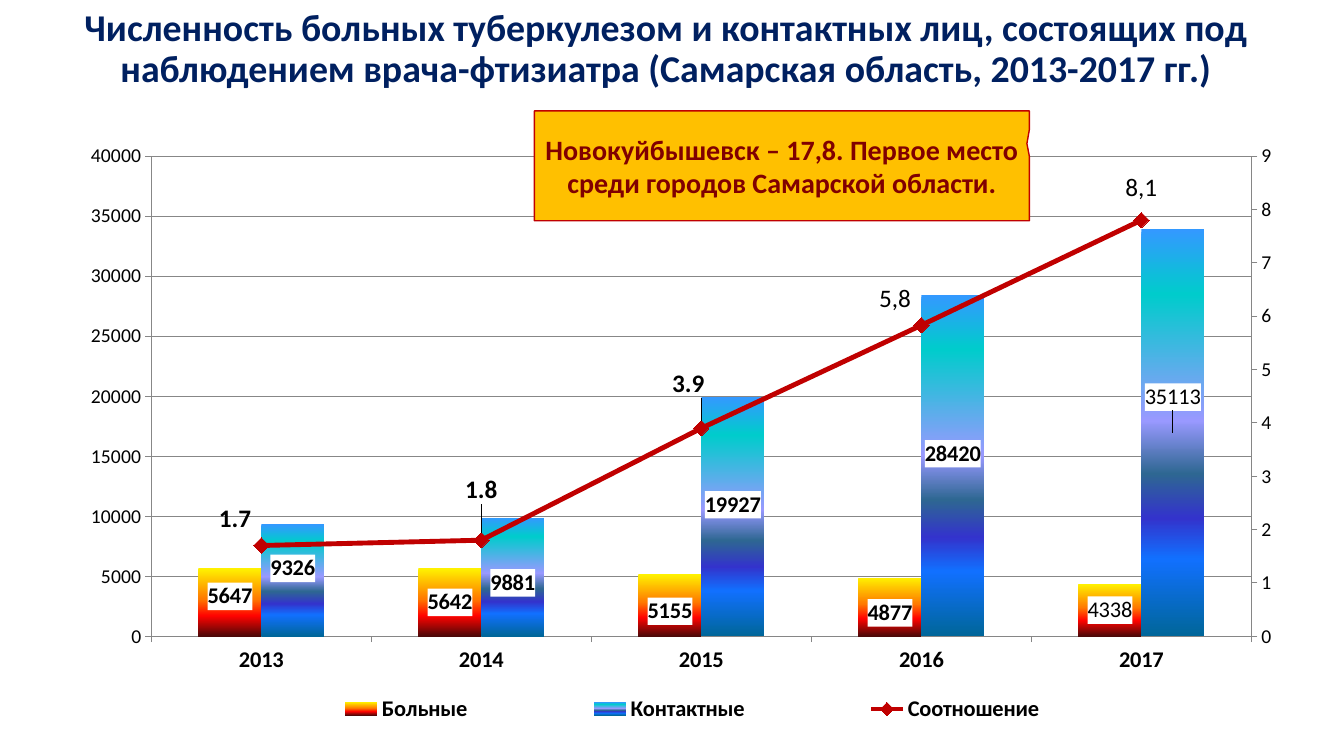
from pptx import Presentation
from pptx.chart.axis import ValueAxis
from pptx.chart.data import CategoryChartData
from pptx.dml.color import RGBColor
from pptx.enum.chart import (XL_CHART_TYPE, XL_LABEL_POSITION, XL_LEGEND_POSITION,
                             XL_MARKER_STYLE, XL_TICK_MARK)
from pptx.enum.shapes import MSO_SHAPE
from pptx.enum.text import MSO_ANCHOR, PP_ALIGN
from pptx.oxml import parse_xml
from pptx.oxml.ns import nsdecls
from pptx.util import Inches, Pt

COLUMNS = XL_CHART_TYPE.COLUMN_CLUSTERED
CENTER, ABOVE = XL_LABEL_POSITION.CENTER, XL_LABEL_POSITION.ABOVE
BOTTOM, DIAMOND = XL_LEGEND_POSITION.BOTTOM, XL_MARKER_STYLE.DIAMOND
OUTSIDE, NONE = XL_TICK_MARK.OUTSIDE, XL_TICK_MARK.NONE
FONT = "Calibri"
COLORS = {"title": "002060", "line": "C00000", "note": "FFC000", "note_text": "800000",
          "axis": "868686", "text": "000000", "label": "FFFFFF"}
GRADIENTS = [
    [(0, "FFF200"), (45, "FF7A00"), (70, "FF0300"), (100, "4D0808")],
    [(0, "3399FF"), (16, "00CCCC"), (47, "9999FF"), (60, "2E6792"),
     (71, "3333CC"), (81, "1170FF"), (100, "006699")],
]


def style_font(font, size, color, bold=False):
    font.name, font.size, font.bold = FONT, Pt(size), bold
    font.color.rgb = RGBColor.from_string(COLORS[color])


def manual_layout(x, y, w=None, h=None, inner=False):
    target = '<c:layoutTarget val="inner"/>' if inner else ""
    modes = '<c:xMode val="edge"/><c:yMode val="edge"/>' if w else ""
    size = f'<c:w val="{w}"/><c:h val="{h}"/>' if w else ""
    return parse_xml(f'<c:layout {nsdecls("c")}><c:manualLayout>{target}{modes}'
                     f'<c:x val="{x}"/><c:y val="{y}"/>{size}</c:manualLayout></c:layout>')


prs = Presentation()
prs.slide_width, prs.slide_height = Inches(13.33), Inches(7.5)
s = prs.slides.add_slide(prs.slide_layouts[6])

# Title
title = s.shapes.add_textbox(0, 0, Inches(13.21), Inches(0.98))
tf = title.text_frame
tf.word_wrap, tf.vertical_anchor = True, MSO_ANCHOR.MIDDLE
tf.text = ("Численность больных туберкулезом и контактных лиц, состоящих под "
           "наблюдением врача-фтизиатра (Самарская область, 2013-2017 гг.)")
p = tf.paragraphs[0]
p.alignment, p.line_spacing = PP_ALIGN.CENTER, 0.9
style_font(p.runs[0].font, 27, "title", True)

# Chart data
data = CategoryChartData()
data.categories = ["2013", "2014", "2015", "2016", "2017"]
data.add_series("Больные", [5647, 5642, 5155, 4877, 4354])
data.add_series("Контактные", [9326, 9881, 19927, 28420, 33896])
data.add_series("Соотношение", [1.7, 1.8, 3.9, 5.83, 7.8])
chart = s.shapes.add_chart(COLUMNS, Inches(0.16), Inches(1.39), Inches(13.02),
                           Inches(5.91), data).chart
chart.has_title = False
style_font(chart.font, 14, "text")
chart.plots[0].gap_width, chart.plots[0].overlap = 150, 0

# Ratio series becomes a line on a second axis
area = chart._chartSpace.chart.plotArea
bars = area.xpath("c:barChart")[0]
ratio = bars.xpath("c:ser")[2]
for flag in ratio.xpath("c:invertIfNegative"):
    ratio.remove(flag)
line_chart = parse_xml(
    f'<c:lineChart {nsdecls("c")}><c:grouping val="standard"/><c:varyColors val="0"/>'
    '<c:marker val="1"/><c:axId val="501"/><c:axId val="502"/></c:lineChart>')
line_chart.insert(2, ratio)
bars.addnext(line_chart)
hidden_axis = parse_xml(
    f'<c:catAx {nsdecls("c")}><c:axId val="501"/><c:scaling><c:orientation val="minMax"/>'
    '</c:scaling><c:delete val="1"/><c:axPos val="b"/><c:crossAx val="502"/>'
    '<c:crosses val="autoZero"/></c:catAx>')
right_axis = parse_xml(
    f'<c:valAx {nsdecls("c")}><c:axId val="502"/><c:scaling><c:orientation val="minMax"/>'
    '</c:scaling><c:delete val="0"/><c:axPos val="r"/>'
    '<c:numFmt formatCode="General" sourceLinked="0"/><c:tickLblPos val="nextTo"/>'
    '<c:crossAx val="501"/><c:crosses val="max"/><c:crossBetween val="between"/></c:valAx>')
area.xpath("c:valAx")[0].addnext(hidden_axis)
hidden_axis.addnext(right_axis)

# Axes
right = ValueAxis(right_axis)
for axis, top, step in ((chart.value_axis, 40000, 5000), (right, 9, 1)):
    axis.minimum_scale, axis.maximum_scale, axis.major_unit = 0, top, step
    style_font(axis.tick_labels.font, 14, "text")
style_font(chart.category_axis.tick_labels.font, 16, "text", True)
for axis in (chart.value_axis, right, chart.category_axis):
    axis.has_major_gridlines = False
    axis.major_tick_mark, axis.minor_tick_mark = OUTSIDE, NONE
    axis.format.line.color.rgb = RGBColor.from_string(COLORS["axis"])

# Column and line formats
columns, (ratio_line,) = list(chart.plots[0].series), chart.plots[1].series
for ser, stops in zip(columns, GRADIENTS):
    ser.format.fill.gradient()
    ser.format.fill.gradient_angle = 270
    stop_list = ser._element.xpath(".//a:gsLst")[0]
    for stop in list(stop_list):
        stop_list.remove(stop)
    for pos, color in stops:
        stop_list.append(parse_xml(f'<a:gs {nsdecls("a")} pos="{pos * 1000}">'
                                   f'<a:srgbClr val="{color}"/></a:gs>'))
red = RGBColor.from_string(COLORS["line"])
ratio_line.smooth = False
ratio_line.format.line.color.rgb, ratio_line.format.line.width = red, Pt(3.5)
ratio_line.marker.style, ratio_line.marker.size = DIAMOND, 11
ratio_line.marker.format.fill.solid()
ratio_line.marker.format.fill.fore_color.rgb = red
ratio_line.marker.format.line.color.rgb = red

# Data labels: size, position, replaced texts, shifts as shares of the chart
LABELS = [
    (columns[0], 16, CENTER, {4: "4338"},
     [(0, -0.01), (0, 0), (0, 0.01), (0, 0.01), (0, 0)]),
    (columns[1], 16, CENTER, {4: "35113"},
     [(0, -0.02), (0, 0.01), (0, -0.02), (0, -0.02), (0, -0.06)]),
    (ratio_line, 18, ABOVE, {3: "5,8", 4: "8,1"},
     [(-0.02, 0), (0, -0.04), (-0.01, -0.03), (-0.02, 0), (0, -0.01)]),
]
for ser, size, position, texts, shifts in LABELS:
    ser.data_labels.show_value = True
    ser.data_labels.position = position
    style_font(ser.data_labels.font, size, "text", True)
    for i, shift in enumerate(shifts):
        label = ser.points[i].data_label
        if i in texts:
            label.text_frame.text = texts[i]
            style_font(label.text_frame.paragraphs[0].runs[0].font, size, "text")
        else:
            style_font(label.font, size, "text", True)
        label.position = position
        node = ser._element.xpath(f"c:dLbls/c:dLbl[c:idx/@val='{i}']")[0]
        node.xpath("c:idx")[0].addnext(manual_layout(*shift))
        if position == CENTER:
            for old in node.xpath("c:spPr"):
                node.remove(old)
            node.xpath("c:txPr|c:dLblPos")[0].addprevious(parse_xml(
                f'<c:spPr {nsdecls("c", "a")}><a:solidFill>'
                f'<a:srgbClr val="{COLORS["label"]}"/></a:solidFill></c:spPr>'))

# Legend and plot area
chart.has_legend = True
legend = chart.legend
legend.position, legend.include_in_layout = BOTTOM, False
style_font(legend.font, 16, "text", True)
for old in legend._element.xpath("c:layout") + area.xpath("c:layout"):
    old.getparent().remove(old)
legend._element.xpath("c:legendPos")[0].addnext(manual_layout(0.16, 0.92, 0.71, 0.07))
area.insert(0, manual_layout(0.103, 0.027, 0.838, 0.806, inner=True))

# Callout
note = s.shapes.add_shape(MSO_SHAPE.RECTANGULAR_CALLOUT, Inches(5.3), Inches(1.1),
                          Inches(4.91), Inches(1.09))
note.adjustments[0], note.adjustments[1] = 0.495, -0.202
note.shadow.inherit = False
note.fill.solid()
note.fill.fore_color.rgb = RGBColor.from_string(COLORS["note"])
note.line.color.rgb, note.line.width = red, Pt(1)
tf = note.text_frame
tf.word_wrap, tf.vertical_anchor = True, MSO_ANCHOR.MIDDLE
tf.text = "Новокуйбышевск – 17,8. Первое место среди городов Самарской области."
p = tf.paragraphs[0]
p.alignment = PP_ALIGN.CENTER
style_font(p.runs[0].font, 20, "note_text", True)

prs.save("out.pptx")
